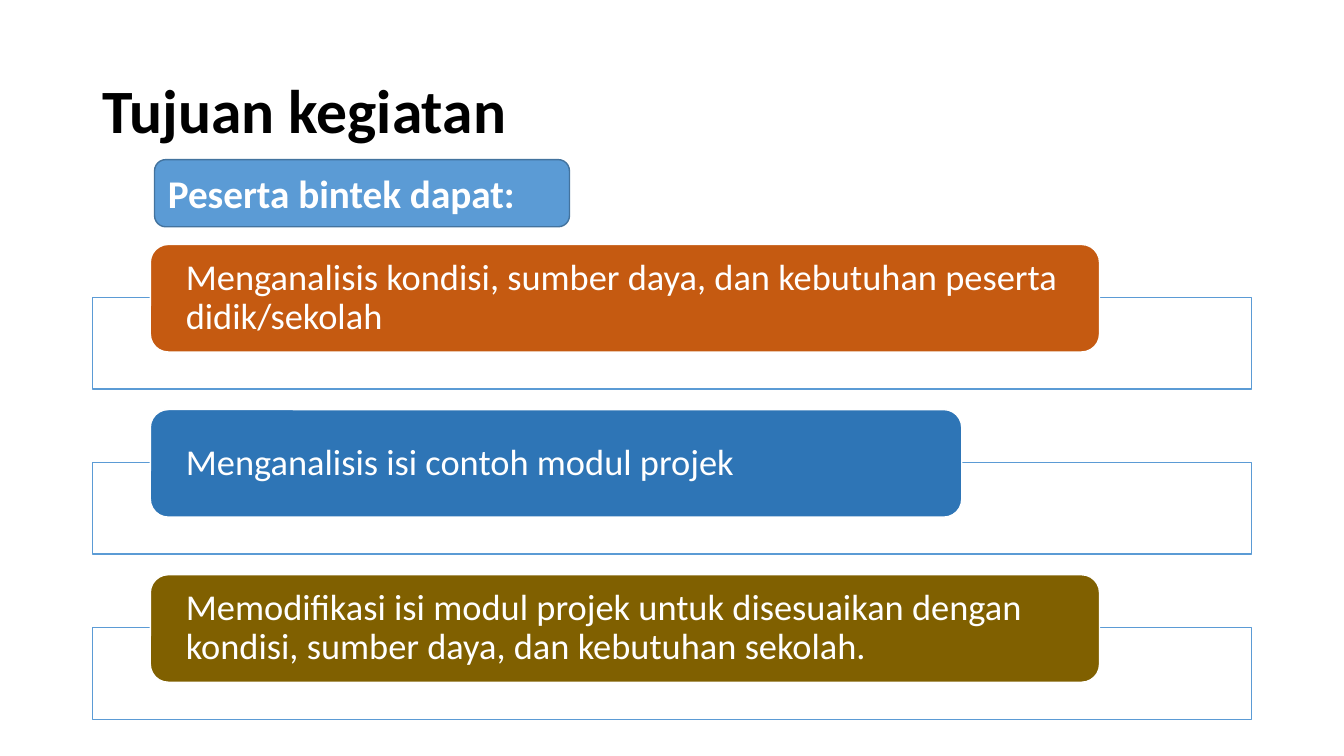
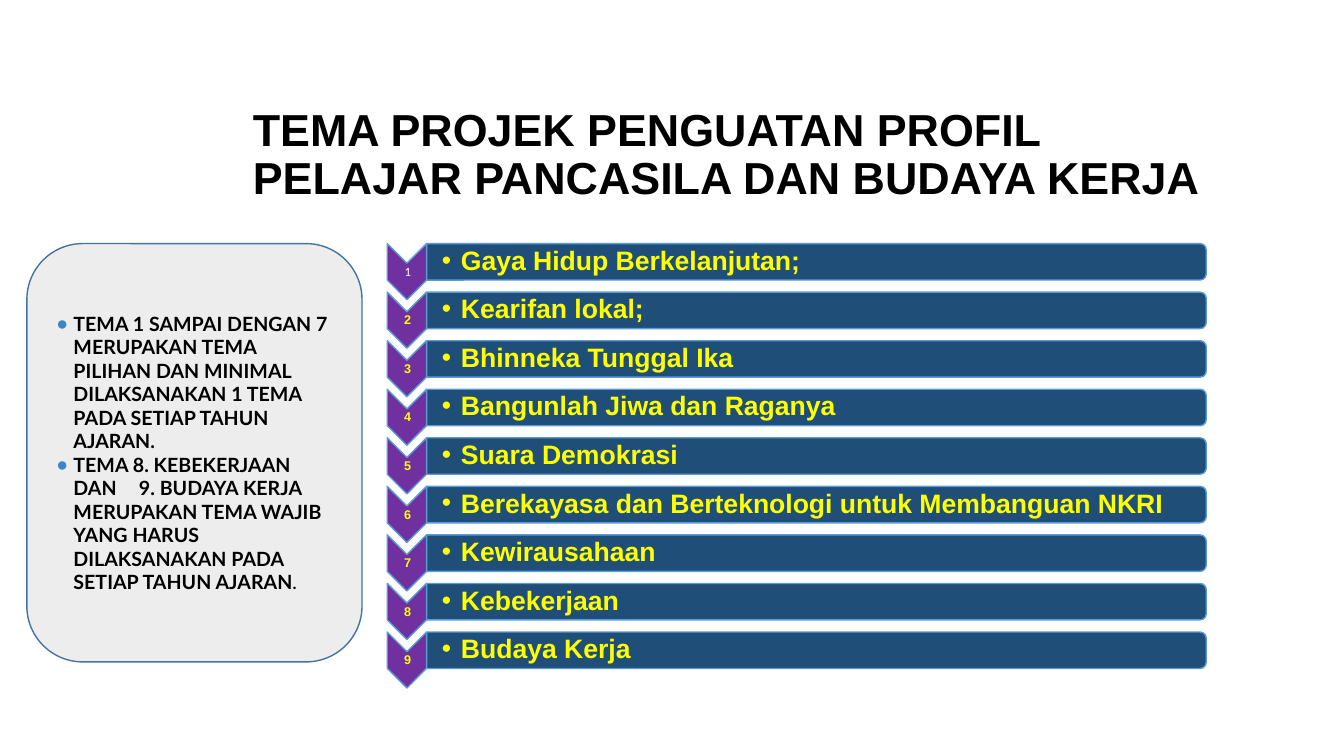
from dataclasses import dataclass, replace

from lxml.etree import SubElement
from pptx import Presentation
from pptx.dml.color import RGBColor
from pptx.enum.shapes import MSO_SHAPE
from pptx.enum.text import MSO_ANCHOR, PP_ALIGN
from pptx.oxml.ns import qn
from pptx.util import Inches, Pt

COLUMNS, ROWS = 80, 45
WHITE, BLACK, YELLOW = "FFFFFF", "000000", "FFFF00"
BLUE, DARK_BLUE, NAVY = "5B9BD5", "43739E", "1F4E79"
PURPLE, GREY, BULLET_BLUE = "7030A0", "EDEDED", "3D85C6"


def color(hex_string):
    return RGBColor.from_string(hex_string)


@dataclass(frozen=True)
class TextStyle:
    size: float
    color: str = BLACK
    font: str = "Calibri"
    bold: bool = False
    spacing: float = 0.9


@dataclass(frozen=True)
class Bullet:
    """A bullet sign with its hanging indent and optional tab stop, in columns."""
    sign: str
    left: float
    hang: float
    color: str
    tab: float = 0


TITLE = TextStyle(44, bold=True)
CARD_TEXT = TextStyle(26, WHITE)
LABEL_TEXT = TextStyle(28, WHITE, bold=True, spacing=1)
THEME_TEXT = TextStyle(19, YELLOW, "Arial", True)
NUMBER_TEXT = replace(THEME_TEXT, size=9)
FIRST_NUMBER_TEXT = TextStyle(9, WHITE)
NOTE_TEXT = TextStyle(14, BLACK, "Lato", True, 1)
THEME_BULLET = Bullet("•", 1.14, 1.14, YELLOW)
NOTE_BULLET = Bullet("●", 1.2, 1.02, BULLET_BLUE, 5.1)


class Deck:
    def __init__(self):
        self.presentation = Presentation()
        self.presentation.slide_width = Inches(13.333)
        self.presentation.slide_height = Inches(7.5)
        self.slide = None

    def columns(self, count):
        return round(self.presentation.slide_width * count / COLUMNS)

    def rows(self, count):
        return round(self.presentation.slide_height * count / ROWS)

    def place(self, left, top, width, height):
        return (self.columns(left), self.rows(top),
                self.columns(width), self.rows(height))

    def add_slide(self):
        self.slide = self.presentation.slides.add_slide(
            self.presentation.slide_layouts[6])

    def shape(self, kind, box, fill, line, turned=False):
        """Draw a shape that fills box, even when it is turned a quarter."""
        left, top, width, height = box
        if turned:
            shift = (width - height) / 2
            box = left + shift, top - shift, height, width
        shape = self.slide.shapes.add_shape(kind, *self.place(*box))
        shape.rotation = 90 if turned else 0
        shape.shadow.inherit = False
        shape.fill.solid()
        shape.fill.fore_color.rgb = color(fill)
        shape.line.color.rgb = color(line)
        shape.line.width = Pt(1)
        return shape

    def text_box(self, box, paragraphs, style, **options):
        shape = self.slide.shapes.add_textbox(*self.place(*box))
        self.add_text(shape, paragraphs, style, **options)

    def title(self, box, text, style=TITLE):
        self.text_box(box, [[(text, style)]], style)

    def add_text(self, shape, paragraphs, style, align=PP_ALIGN.LEFT,
                 bullet=None, insets=(0.6, 0.3, 0.6, 0.3)):
        """Fill shape with paragraphs, each a list of (text, style) runs."""
        frame = shape.text_frame
        frame.word_wrap = True
        frame.vertical_anchor = MSO_ANCHOR.MIDDLE
        (frame.margin_left, frame.margin_top,
         frame.margin_right, frame.margin_bottom) = map(self.columns, insets)
        for index, runs in enumerate(paragraphs):
            paragraph = frame.add_paragraph() if index else frame.paragraphs[0]
            paragraph.alignment = align
            paragraph.line_spacing = style.spacing
            for text, run_style in runs:
                self.add_run(paragraph, text, run_style)
            if bullet:
                self.add_bullet(paragraph, bullet)

    def add_run(self, paragraph, text, style):
        run = paragraph.add_run()
        run.text = text
        run.font.size = Pt(style.size)
        run.font.name = style.font
        run.font.bold = style.bold
        run.font.color.rgb = color(style.color)

    def add_bullet(self, paragraph, bullet):
        properties = paragraph._p.get_or_add_pPr()
        properties.set("marL", str(self.columns(bullet.left)))
        properties.set("indent", str(-self.columns(bullet.hang)))
        bullet_color = SubElement(properties, qn("a:buClr"))
        SubElement(bullet_color, qn("a:srgbClr"), val=bullet.color)
        SubElement(properties, qn("a:buFont"), typeface="Arial")
        SubElement(properties, qn("a:buChar"), char=bullet.sign)
        if bullet.tab:
            tabs = SubElement(properties, qn("a:tabLst"))
            SubElement(tabs, qn("a:tab"), pos=str(self.columns(bullet.tab)), algn="l")

    def goal(self, top, width, fill, text):
        """A coloured card that overlaps the upper edge of a wide frame."""
        self.shape(MSO_SHAPE.RECTANGLE, (5.5, top + 3.15, 69, 5.46), WHITE, BLUE)
        card = self.shape(MSO_SHAPE.ROUNDED_RECTANGLE, (8.95, top, width, 6.4),
                          fill, WHITE)
        self.add_text(card, [[(text, CARD_TEXT)]], CARD_TEXT, insets=(1.8, 0, 1.8, 0))

    def theme(self, number, top, text):
        """A numbered chevron followed by a bar with the theme's name."""
        number_style = FIRST_NUMBER_TEXT if number == 1 else NUMBER_TEXT
        thin = 0.06
        self.shape(MSO_SHAPE.CHEVRON, (23.05, top, 2.34, 3.34), PURPLE, BLUE, True)
        self.text_box((23.1, top + 1.2, 2.34, 1), [[(str(number), number_style)]],
                      number_style, align=PP_ALIGN.CENTER, insets=(thin,) * 4)
        self.shape(MSO_SHAPE.ROUND_2_SAME_RECTANGLE, (25.4, top, 46.4, 2.17),
                   NAVY, BLUE, True)
        self.text_box((25.4, top + 0.1, 46.3, 1.95), [[(text, THEME_TEXT)]],
                      THEME_TEXT, bullet=THEME_BULLET, insets=(0.9, thin, thin, thin))


def build_goals(deck):
    deck.add_slide()
    deck.title((5.5, 2.4, 69, 8.7), "Tujuan kegiatan")
    goals = [
        (56.5, "C55A11", "Menganalisis kondisi, sumber daya, dan kebutuhan "
                         "peserta didik/sekolah"),
        (48.3, "2E75B6", "Menganalisis isi contoh modul projek"),
        (56.5, "806000", "Memodifikasi isi modul projek untuk disesuaikan dengan "
                         "kondisi, sumber daya, dan kebutuhan sekolah."),
    ]
    for index, (width, fill, text) in enumerate(goals):
        deck.goal(14.55 + 9.83 * index, width, fill, text)
    label = deck.shape(MSO_SHAPE.ROUNDED_RECTANGLE, (9.2, 9.5, 24.7, 4),
                       BLUE, DARK_BLUE)
    deck.add_text(label, [[("Peserta bintek dapat:", LABEL_TEXT)]], LABEL_TEXT)


def build_themes(deck):
    deck.add_slide()
    deck.title((14.45, 5.05, 61, 8.45),
               "TEMA PROJEK PENGUATAN PROFIL PELAJAR PANCASILA DAN BUDAYA KERJA",
               replace(TITLE, size=32, font="Arial"))
    themes = [
        "Gaya Hidup Berkelanjutan;", "Kearifan lokal;", "Bhinneka Tunggal Ika",
        "Bangunlah Jiwa dan Raganya", "Suara Demokrasi",
        "Berekayasa dan Berteknologi untuk Membanguan NKRI",
        "Kewirausahaan", "Kebekerjaan", "Budaya Kerja",
    ]
    for index, text in enumerate(themes):
        deck.theme(index + 1, 14.5 + 2.89 * index, text)
    note = deck.shape(MSO_SHAPE.ROUNDED_RECTANGLE, (1.6, 14.5, 19.95, 24.9),
                      GREY, DARK_BLUE)
    deck.add_text(note, [
        [("TEMA 1 SAMPAI DENGAN 7 MERUPAKAN TEMA PILIHAN DAN MINIMAL "
          "DILAKSANAKAN 1 TEMA PADA SETIAP TAHUN AJARAN.", NOTE_TEXT)],
        [("TEMA 8. KEBEKERJAAN DAN\t9. BUDAYA KERJA MERUPAKAN TEMA WAJIB "
          "YANG HARUS DILAKSANAKAN PADA SETIAP TAHUN AJARAN", NOTE_TEXT),
         (".", replace(NOTE_TEXT, size=12))],
    ], NOTE_TEXT, bullet=NOTE_BULLET)


def main():
    deck = Deck()
    build_goals(deck)
    build_themes(deck)
    deck.presentation.save("out.pptx")


if __name__ == "__main__":
    main()
